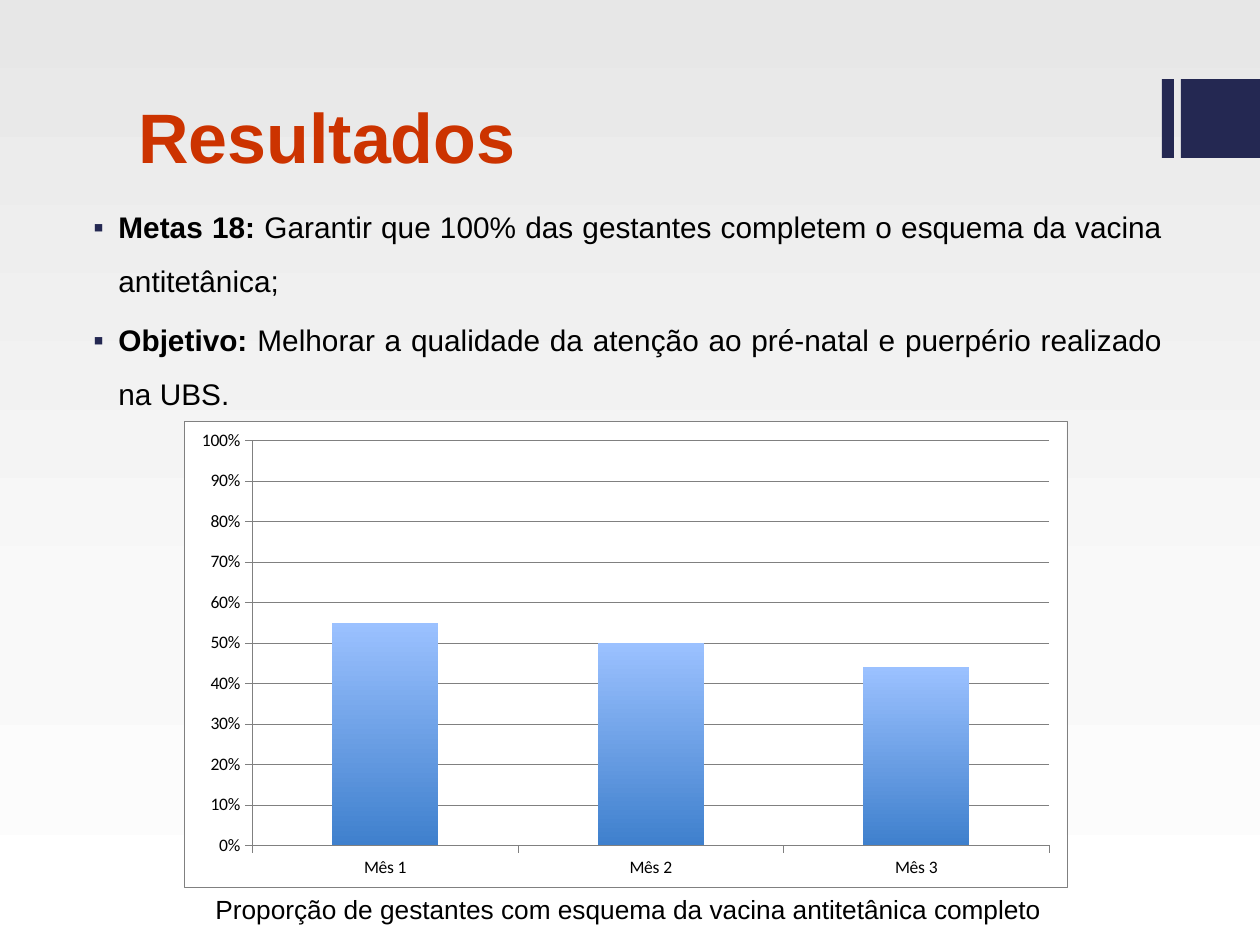
from pptx import Presentation
from pptx.chart.data import CategoryChartData
from pptx.dml.color import RGBColor
from pptx.enum.chart import XL_CHART_TYPE as CT, XL_TICK_MARK as TM
from pptx.enum.shapes import MSO_SHAPE as SHP
from pptx.enum.text import MSO_ANCHOR as ANC, PP_ALIGN as AL
from pptx.oxml import parse_xml
from pptx.oxml.ns import nsdecls, qn
from pptx.util import Emu, Pt

COLORS = {
    "navy": "242852", "red": "CC3300", "black": "000000", "white": "FFFFFF",
    "gray": "808080", "top": "E7E7E7", "middle": "F9F9F9",
    "light_blue": "9BC1FF", "blue": "3F80CD",
}


def px(n):
    return Emu(round(n * 914400 / 126))


def rgb(name):
    return RGBColor.from_string(COLORS[name])


class Deck:
    """Holds the style and the current slide, and draws each kind of element."""

    def __init__(self, width, height):
        self.prs = Presentation()
        self.prs.slide_width, self.prs.slide_height = px(width), px(height)
        self.s = self.prs.slides.add_slide(self.prs.slide_layouts[6])
        self.font = "Arial"
        self.chart_font = "Calibri"

    def gradient(self, fill, owner, stops):
        fill.gradient()
        fill.gradient_angle = 270
        gs_lst = owner.find(".//" + qn("a:gsLst"))
        for gs in list(gs_lst):
            gs_lst.remove(gs)
        for pos, name in stops:
            gs_lst.append(parse_xml(
                f'<a:gs {nsdecls("a")} pos="{pos * 1000}">'
                f'<a:srgbClr val="{COLORS[name]}"/></a:gs>'))

    def background(self, stops):
        self.gradient(self.s.background.fill, self.s.element, stops)

    def rect(self, x, y, w, h, color):
        sp = self.s.shapes.add_shape(SHP.RECTANGLE, px(x), px(y), px(w), px(h))
        sp.shadow.inherit = False
        sp.fill.solid()
        sp.fill.fore_color.rgb = rgb(color)
        sp.line.fill.background()

    def text(self, x, y, w, h, paragraphs, size, color="black",
             anchor=ANC.TOP, bullet=False):
        tf = self.s.shapes.add_textbox(px(x), px(y), px(w), px(h)).text_frame
        tf.word_wrap = True
        tf.vertical_anchor = anchor
        for i, runs in enumerate(paragraphs):
            p = tf.paragraphs[0] if i == 0 else tf.add_paragraph()
            if bullet:
                self.bullet(p, size)
            for words, bold in runs:
                r = p.add_run()
                r.text = words
                r.font.name, r.font.size, r.font.bold = self.font, Pt(size), bold
                r.font.color.rgb = rgb(color)

    def bullet(self, p, size):
        p.alignment = AL.JUSTIFY
        p.line_spacing = 1.5
        p.space_before = Pt(size * 0.2)
        pPr = p._p.get_or_add_pPr()
        pPr.set("marL", str(px(32)))
        pPr.set("indent", str(-px(25)))
        for xml in (f'<a:buClr {nsdecls("a")}><a:srgbClr val="{COLORS["navy"]}"/></a:buClr>',
                    f'<a:buFont {nsdecls("a")} typeface="{self.font}"/>',
                    f'<a:buChar {nsdecls("a")} char="▪"/>'):
            pPr.append(parse_xml(xml))

    def hairline(self, line):
        line.color.rgb = rgb("gray")
        line.width = Pt(0.25)

    def area(self, line):
        return parse_xml(
            f'<c:spPr {nsdecls("c", "a")}><a:solidFill><a:srgbClr val="{COLORS["white"]}"/>'
            f'</a:solidFill>{line}</c:spPr>')

    def columns(self, x, y, w, h, cats, name, vals, stops):
        data = CategoryChartData(number_format="0%")
        data.categories = cats
        data.add_series(name, vals)
        chart = self.s.shapes.add_chart(
            CT.COLUMN_CLUSTERED, px(x), px(y), px(w), px(h), data).chart
        chart.has_legend = chart.has_title = False
        chart.font.name, chart.font.size = self.chart_font, Pt(10)
        chart.font.color.rgb = rgb("black")
        for axis in (chart.category_axis, chart.value_axis):
            axis.major_tick_mark = TM.OUTSIDE
            axis.minor_tick_mark = TM.NONE
            self.hairline(axis.format.line)
        axis = chart.value_axis
        axis.minimum_scale, axis.maximum_scale, axis.major_unit = 0, 1, 0.1
        axis.tick_labels.number_format = "0%"
        axis.tick_labels.number_format_is_linked = False
        axis.has_major_gridlines = True
        self.hairline(axis.major_gridlines.format.line)
        plot = chart.plots[0]
        plot.gap_width = 150
        plot.vary_by_categories = False
        ser = plot.series[0]
        self.gradient(ser.format.fill, ser._element, stops)
        body = chart._chartSpace.find(qn("c:chart"))
        body.find(qn("c:plotArea")).append(self.area("<a:ln><a:noFill/></a:ln>"))
        body.addnext(self.area(
            f'<a:ln w="{Pt(0.25)}"><a:solidFill><a:srgbClr val="{COLORS["gray"]}"/>'
            '</a:solidFill></a:ln>'))


def main():
    d = Deck(1260, 945)
    d.background([(0, "top"), (65, "middle"), (100, "white")])
    for x, w in ((1162, 12), (1181, 79)):
        d.rect(x, 79, w, 79, "navy")
    d.text(126, 25, 1008, 159, [[("Resultados", True)]], 40, "red", ANC.BOTTOM)
    d.text(74, 185, 1101, 159, [
        [("Metas 18:", True),
         (" Garantir que 100% das gestantes completem o esquema da vacina antitetânica;", False)],
        [("Objetivo: ", True),
         ("Melhorar a qualidade da atenção ao pré-natal e puerpério realizado na UBS.", False)],
    ], 17, bullet=True)
    d.columns(184, 421, 883, 466, ["Mês 1", "Mês 2", "Mês 3"], "Series 1",
              [0.55, 0.5, 0.44], [(0, "light_blue"), (100, "blue")])
    d.text(203, 887, 903, 44, [
        [("Proporção de gestantes com esquema da vacina antitetânica completo", False)]], 15)
    d.prs.save("out.pptx")


if __name__ == "__main__":
    main()
